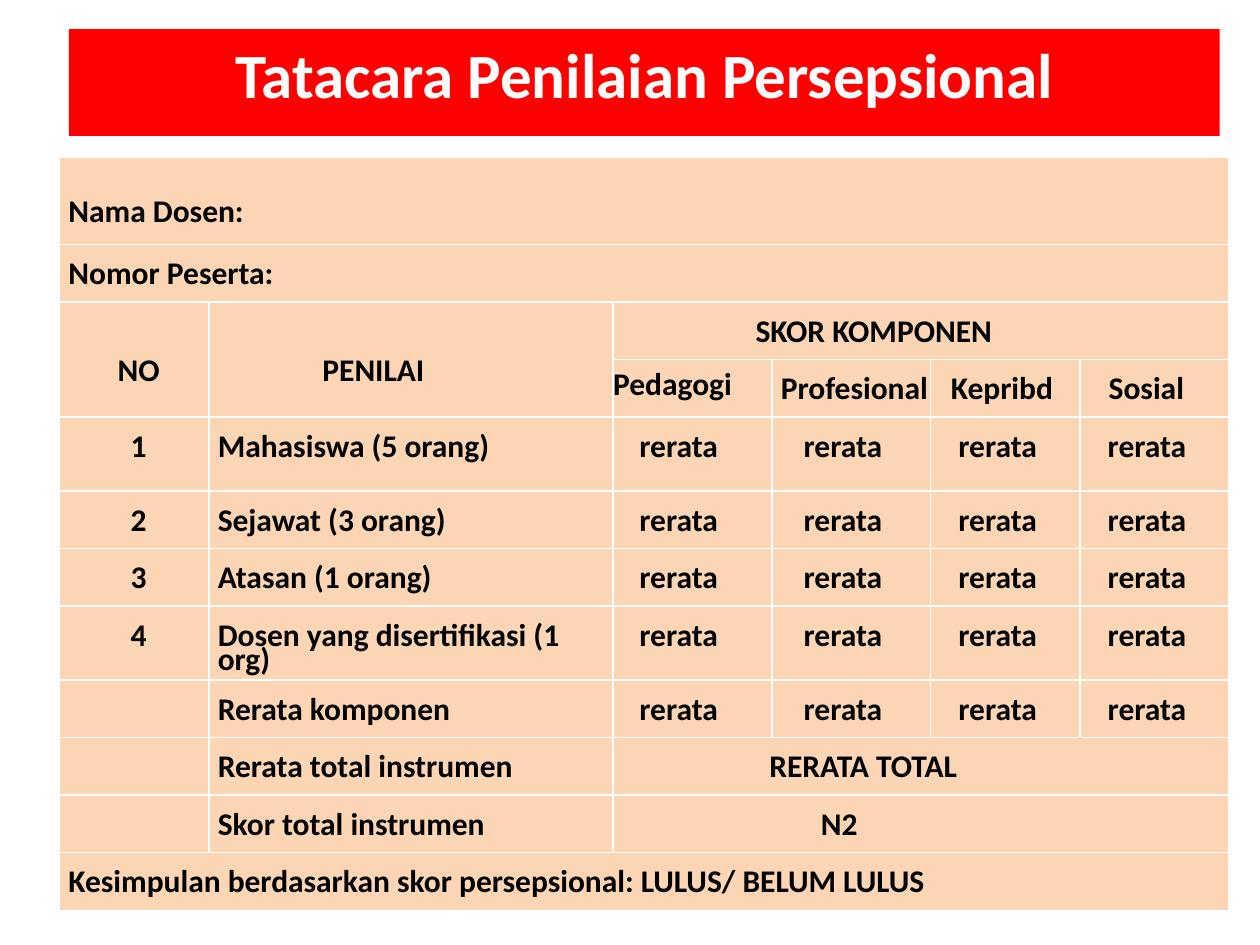
"""Build the slide on how perceptional assessment scores are recorded."""
from dataclasses import dataclass

from lxml.etree import SubElement
from pptx import Presentation
from pptx.dml.color import RGBColor
from pptx.enum.shapes import MSO_SHAPE
from pptx.enum.text import MSO_ANCHOR, PP_ALIGN
from pptx.oxml.ns import qn
from pptx.util import Cm, Pt

RED = RGBColor(0xFF, 0x00, 0x00)
PEACH = RGBColor(0xFC, 0xD5, 0xB5)
WHITE = RGBColor(0xFF, 0xFF, 0xFF)
BLACK = RGBColor(0x00, 0x00, 0x00)

COLUMN_WIDTHS = [3.01, 8.15, 3.2, 3.2, 3.01, 3.01]
ROW_HEIGHTS = [1.75, *[1.16] * 3, 1.49, *[1.16] * 2, 1.49, *[1.16] * 4]
FIRST_ASSESSOR_ROW = 4
ASSESSORS = [
    ("1", "Mahasiswa (5 orang)"),
    ("2", "Sejawat (3 orang)"),
    ("3", "Atasan (1 orang)"),
    ("4", "Dosen yang disertifikasi (1 org)"),
    ("", "Rerata komponen"),
]
SCORE_INDENTS = [0.53, 0.64, 0.56, 0.56]


@dataclass(frozen=True)
class Entry:
    row: int
    column: int
    text: str
    indent: float = 0.18
    align: PP_ALIGN = PP_ALIGN.LEFT
    top: float = 0.49
    spacing: float | Pt = Pt(13.9)
    rows: int = 1
    columns: int = 1


def form_entries() -> list[Entry]:
    """List every filled cell of the assessment form."""
    entries = [
        Entry(0, 0, "Nama Dosen:", top=0.99, columns=6),
        Entry(1, 0, "Nomor Peserta:", columns=6),
        Entry(2, 0, "NO", align=PP_ALIGN.CENTER, top=0.89, spacing=Pt(25.2), rows=2),
        Entry(2, 1, "PENILAI", indent=2.29, top=0.89, spacing=Pt(25.2), rows=2),
        Entry(2, 2, "SKOR KOMPONEN", indent=2.87, columns=4),
        Entry(3, 2, "Pedagogi", indent=0, top=0, spacing=1.15),
        Entry(3, 3, "Profesional"),
        Entry(3, 4, "Kepribd", indent=0.41),
        Entry(3, 5, "Sosial", indent=0.58),
        Entry(9, 1, "Rerata total instrumen"),
        Entry(9, 2, "RERATA TOTAL", indent=3.15, columns=4),
        Entry(10, 1, "Skor total instrumen"),
        Entry(10, 2, "N2", indent=4.19, columns=4),
        Entry(11, 0, "Kesimpulan berdasarkan skor persepsional: LULUS/ BELUM LULUS", columns=6),
    ]
    for row, (number, assessor) in enumerate(ASSESSORS, FIRST_ASSESSOR_ROW):
        if number:
            entries.append(Entry(row, 0, number, align=PP_ALIGN.CENTER))
        entries.append(Entry(row, 1, assessor))
        entries += [
            Entry(row, column, "rerata", indent=indent)
            for column, indent in enumerate(SCORE_INDENTS, 2)
        ]
    return entries


def write_text(frame, text: str, *, size: float = 18, color: RGBColor = BLACK,
               align: PP_ALIGN = PP_ALIGN.LEFT, spacing: float | Pt = 1.0) -> None:
    """Write one bold paragraph with the given format."""
    frame.word_wrap = True
    paragraph = frame.paragraphs[0]
    paragraph.alignment = align
    paragraph.line_spacing = spacing
    run = paragraph.add_run()
    run.text = text
    run.font.name = "Calibri"
    run.font.size = Pt(size)
    run.font.bold = True
    run.font.color.rgb = color


def style_cell(cell) -> None:
    """Give a cell white borders and a peach fill."""
    properties = cell._tc.get_or_add_tcPr()
    for side in ("lnL", "lnR", "lnT", "lnB"):
        border = SubElement(properties, qn(f"a:{side}"), w=str(Pt(1)))
        border_fill = SubElement(border, qn("a:solidFill"))
        SubElement(border_fill, qn("a:srgbClr"), val=str(WHITE))
    cell.fill.solid()
    cell.fill.fore_color.rgb = PEACH


def add_entry(form, entry: Entry) -> None:
    """Place one entry, merging the cells it spans."""
    cell = form.cell(entry.row, entry.column)
    if entry.rows > 1 or entry.columns > 1:
        cell.merge(form.cell(entry.row + entry.rows - 1, entry.column + entry.columns - 1))
    cell.margin_left = Cm(entry.indent)
    cell.margin_top = Cm(entry.top)
    cell.margin_right = cell.margin_bottom = Cm(0)
    write_text(cell.text_frame, entry.text, align=entry.align, spacing=entry.spacing)


def add_form(slide) -> None:
    """Draw the assessment form."""
    form = slide.shapes.add_table(
        len(ROW_HEIGHTS), len(COLUMN_WIDTHS), Cm(1.2), Cm(3.18),
        Cm(sum(COLUMN_WIDTHS)), Cm(sum(ROW_HEIGHTS)),
    ).table
    for column, width in zip(form.columns, COLUMN_WIDTHS):
        column.width = Cm(width)
    for row, height in zip(form.rows, ROW_HEIGHTS):
        row.height = Cm(height)
    for cell in form.iter_cells():
        style_cell(cell)
    for entry in form_entries():
        add_entry(form, entry)


def add_title(slide) -> None:
    """Draw the red title banner."""
    banner = slide.shapes.add_shape(
        MSO_SHAPE.RECTANGLE, Cm(1.39), Cm(0.59), Cm(23.2), Cm(2.15))
    banner.shadow.inherit = False
    banner.fill.solid()
    banner.fill.fore_color.rgb = RED
    banner.line.fill.background()
    banner.text_frame.vertical_anchor = MSO_ANCHOR.TOP
    write_text(banner.text_frame, "Tatacara Penilaian Persepsional",
               size=36, color=WHITE, align=PP_ALIGN.CENTER)


def main() -> None:
    """Build and save the slide."""
    presentation = Presentation()
    presentation.slide_width, presentation.slide_height = Cm(25.4), Cm(19.05)
    slide = presentation.slides.add_slide(presentation.slide_layouts[6])
    add_form(slide)
    add_title(slide)
    presentation.save("out.pptx")


if __name__ == "__main__":
    main()
